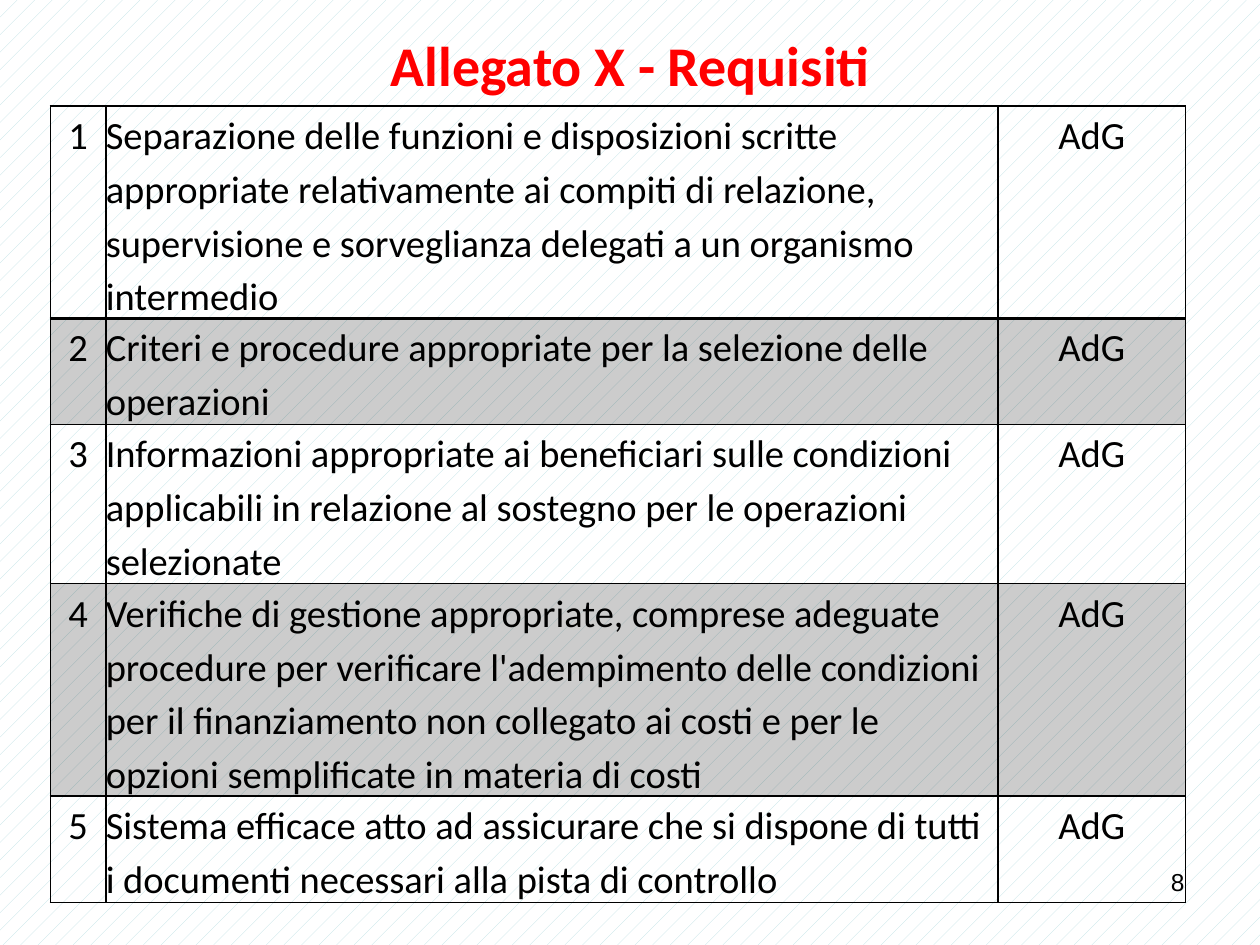
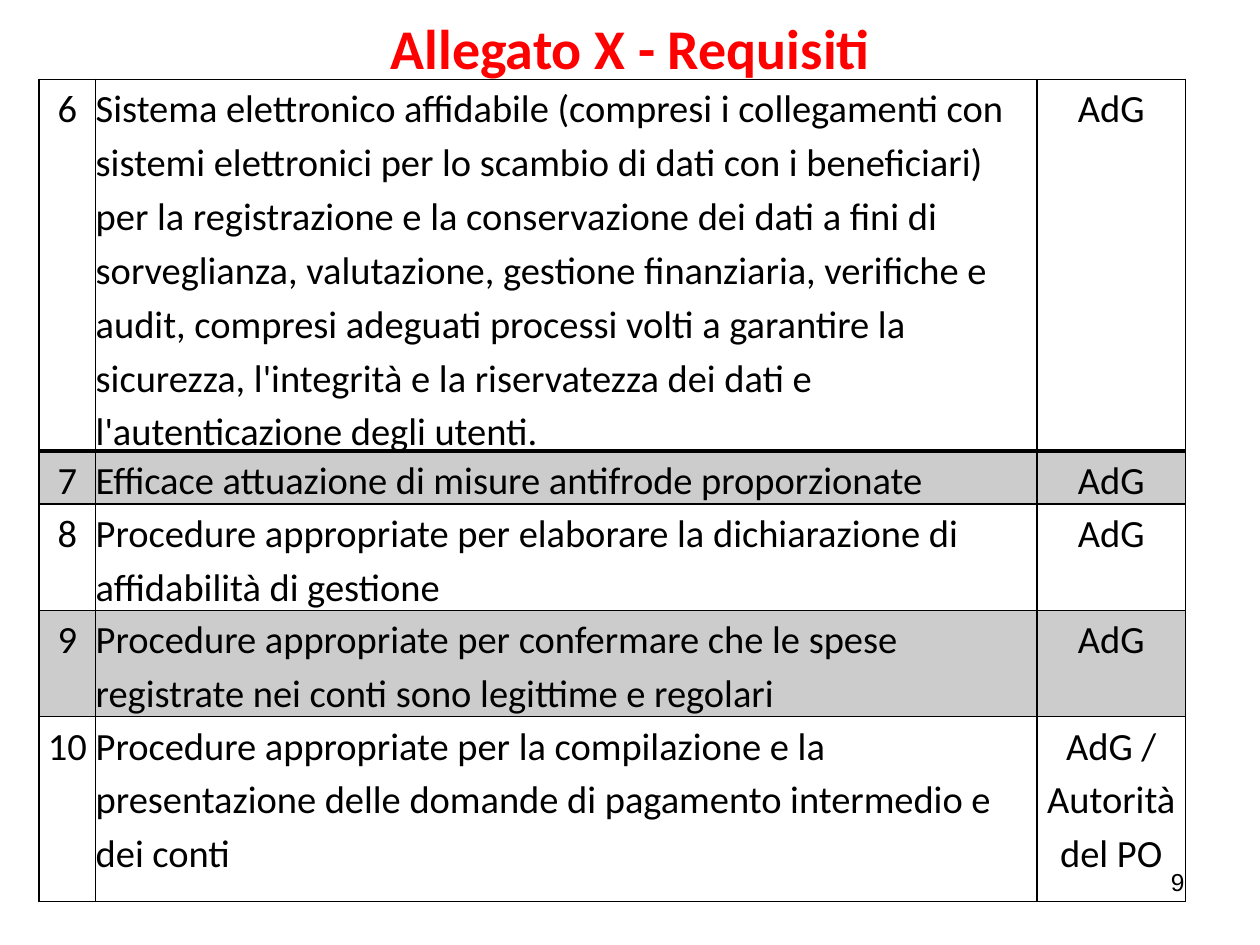
from lxml import etree
from pptx import Presentation
from pptx.dml.color import RGBColor
from pptx.enum.dml import MSO_PATTERN
from pptx.enum.text import MSO_ANCHOR, MSO_AUTO_SIZE, PP_ALIGN
from pptx.oxml.ns import qn
from pptx.util import Inches, Pt

COLORS = {"title": "FF0000", "text": "000000", "line": "000000",
          "band": "000000", "hatch": "BBE0E3", "page": "FFFFFF"}
TITLE_FONT = {"name": "Calibri", "size": Pt(32), "bold": True}
CELL_FONT = {"name": "Calibri", "size": Pt(22), "bold": False}
NUMBER_FONT = {"name": "Arial", "size": Pt(14)}
CELL_SPACING = {"line_spacing": 1.15, "space_before": Pt(3), "space_after": Pt(3)}
NO_MARGINS = {f"margin_{side}": 0 for side in ("left", "top", "right", "bottom")}
BAND_OPACITY = 20
TITLE = "Allegato X - Requisiti"

SLIDES = [
    {
        "number": 8, "hatched": True, "title_height": 0.79,
        "box": (0.4, 0.84, 9.01, 6.2),
        "cols": (0.44, 7.08, 1.49), "rows": (1.05, 0.69, 1.05, 1.4, 0.69),
        "first": 1,
        "requirements": [
            ("Separazione delle funzioni e disposizioni scritte appropriate relativamente "
             "ai compiti di relazione, supervisione e sorveglianza delegati a un organismo "
             "intermedio", "AdG"),
            ("Criteri e procedure appropriate per la selezione delle operazioni", "AdG"),
            ("Informazioni appropriate ai beneficiari sulle condizioni applicabili in "
             "relazione al sostegno per le operazioni selezionate", "AdG"),
            ("Verifiche di gestione appropriate, comprese adeguate procedure per verificare "
             "l'adempimento delle condizioni per il finanziamento non collegato ai costi e "
             "per le opzioni semplificate in materia di costi", "AdG"),
            ("Sistema efficace atto ad assicurare che si dispone di tutti i documenti "
             "necessari alla pista di controllo", "AdG"),
        ],
    },
    {
        "number": 9, "hatched": False, "title_height": 0.52,
        "box": (0.31, 0.63, 9.1, 6.43),
        "cols": (0.45, 7.47, 1.18), "rows": (2.91, 0.38, 0.79, 0.79, 1.47),
        "first": 6,
        "requirements": [
            ("Sistema elettronico affidabile (compresi i collegamenti con sistemi "
             "elettronici per lo scambio di dati con i beneficiari) per la registrazione e "
             "la conservazione dei dati a fini di sorveglianza, valutazione, gestione "
             "finanziaria, verifiche e audit, compresi adeguati processi volti a garantire "
             "la sicurezza, l'integrità e la riservatezza dei dati e l'autenticazione degli "
             "utenti.", "AdG"),
            ("Efficace attuazione di misure antifrode proporzionate", "AdG"),
            ("Procedure appropriate per elaborare la dichiarazione di affidabilità di "
             "gestione", "AdG"),
            ("Procedure appropriate per confermare che le spese registrate nei conti sono "
             "legittime e regolari", "AdG"),
            ("Procedure appropriate per la compilazione e la presentazione delle domande di "
             "pagamento intermedio e dei conti", "AdG / Autorità del PO"),
        ],
    },
]


def rgb(name):
    return RGBColor.from_string(COLORS[name])


def set_attrs(target, values):
    for name, value in values.items():
        setattr(target, name, value)


def write(tf, text, font, color, align):
    p = tf.paragraphs[0]
    p.alignment = align
    r = p.add_run()
    r.text = text
    set_attrs(r.font, font)
    r.font.color.rgb = rgb(color)
    return p


def set_background(s, hatched):
    fill = s.background.fill
    if hatched:
        fill.patterned()
        fill.pattern = MSO_PATTERN.PERCENT_5
        fill.fore_color.rgb = rgb("hatch")
        fill.back_color.rgb = rgb("page")
    else:
        fill.solid()
        fill.fore_color.rgb = rgb("page")


def add_title(s, height):
    sp = s.shapes.title
    set_attrs(sp, {"left": Inches(0.2), "top": Inches(0.11),
                   "width": Inches(9.61), "height": Inches(height)})
    tf = sp.text_frame
    set_attrs(tf, {"word_wrap": True, "auto_size": MSO_AUTO_SIZE.NONE,
                   "vertical_anchor": MSO_ANCHOR.MIDDLE})
    write(tf, TITLE, TITLE_FONT, "title", PP_ALIGN.CENTER)


def add_page_number(s, number):
    sp = s.shapes.add_textbox(Inches(7.17), Inches(6.83), Inches(2.33), Inches(0.52))
    sp.text_frame.word_wrap = True
    write(sp.text_frame, str(number), NUMBER_FONT, "text", PP_ALIGN.RIGHT)


def fill_cell(cell, banded):
    if not banded:
        cell.fill.background()
        return
    cell.fill.solid()
    cell.fill.fore_color.rgb = rgb("band")
    clr = cell._tc.tcPr.find(".//" + qn("a:srgbClr"))
    etree.SubElement(clr, qn("a:alpha"), val=str(BAND_OPACITY * 1000))


def border_cell(cell, top, bottom):
    # Border lines come before the fill in the cell properties
    widths = {"L": 1, "R": 1, "T": top, "B": bottom}
    for i, (side, width) in enumerate(widths.items()):
        ln = etree.Element(qn(f"a:ln{side}"), w=str(Pt(width)))
        solid = etree.SubElement(ln, qn("a:solidFill"))
        etree.SubElement(solid, qn("a:srgbClr"), val=COLORS["line"])
        cell._tc.tcPr.insert(i, ln)


def add_requirements(s, data):
    requirements = data["requirements"]
    table = s.shapes.add_table(len(requirements), len(data["cols"]),
                               *map(Inches, data["box"])).table
    set_attrs(table, {"first_row": False, "horz_banding": False})
    for col, width in zip(table.columns, data["cols"]):
        col.width = Inches(width)
    for row, height in zip(table.rows, data["rows"]):
        row.height = Inches(height)

    for i, (requirement, authority) in enumerate(requirements):
        texts = (str(data["first"] + i), requirement, authority)
        for j, text in enumerate(texts):
            cell = table.cell(i, j)
            set_attrs(cell, NO_MARGINS)
            align = PP_ALIGN.LEFT if j == 1 else PP_ALIGN.CENTER
            p = write(cell.text_frame, text, CELL_FONT, "text", align)
            set_attrs(p, CELL_SPACING)
            fill_cell(cell, banded=i % 2 == 1)
            # A heavier rule separates the first row from the rest
            border_cell(cell, top=2 if i == 1 else 1, bottom=2 if i == 0 else 1)


def main():
    prs = Presentation()
    set_attrs(prs, {"slide_width": Inches(10), "slide_height": Inches(7.5)})
    for data in SLIDES:
        s = prs.slides.add_slide(prs.slide_layouts[5])
        set_background(s, data["hatched"])
        add_title(s, data["title_height"])
        add_page_number(s, data["number"])
        add_requirements(s, data)
    prs.save("out.pptx")


if __name__ == "__main__":
    main()
